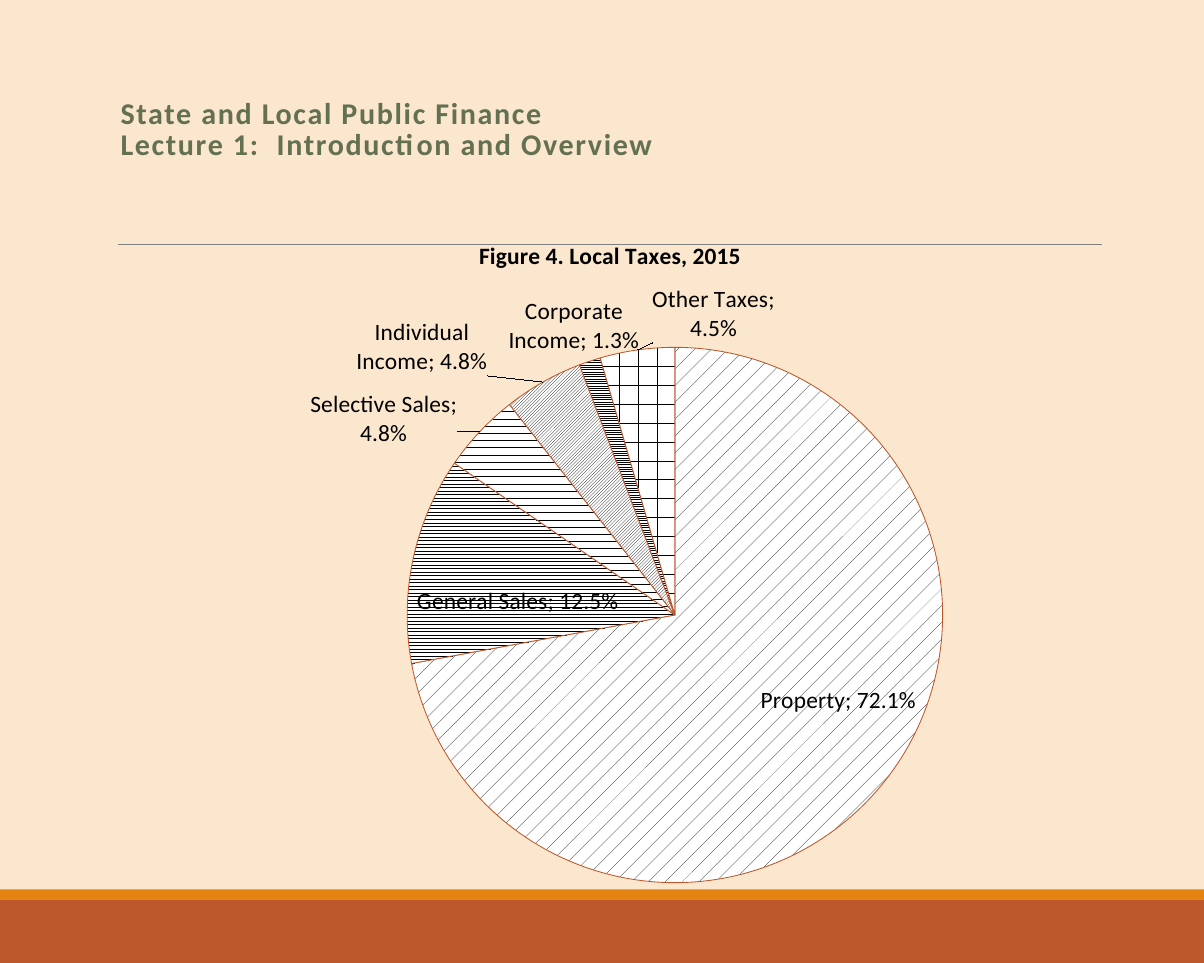
from pptx import Presentation
from pptx import util as u
from pptx.chart.data import CategoryChartData
from pptx.dml.color import RGBColor
from pptx.enum import chart as charts, dml, shapes, text
from pptx.oxml import parse_xml
from pptx.oxml.ns import nsdecls, qn

FONT = "Calibri"
CREAM = RGBColor(0xFB, 0xE6, 0xCE)
RUST = RGBColor(0xBD, 0x58, 0x2C)
ORANGE = RGBColor(0xE4, 0x83, 0x12)
GREEN = RGBColor(0x63, 0x70, 0x52)
GRAY = RGBColor(0x80, 0x80, 0x80)
BLACK = RGBColor(0, 0, 0)
WHITE = RGBColor(0xFF, 0xFF, 0xFF)

# Content
TITLE = "State and Local Public Finance\vLecture 1:  Introduction and Overview"
CHART_TITLE = "Figure 4. Local Taxes, 2015"
PATTERN = dml.MSO_PATTERN
# Tax, share, pattern, label position, label shift as a fraction of the chart
TAXES = [
    ("Property", 0.721, PATTERN.PERCENT_5, "ctr", (0.07, 0)),
    ("General Sales", 0.125, PATTERN.ZIG_ZAG, "ctr", (-0.03, 0.02)),
    ("Selective Sales", 0.048, PATTERN.DASHED_HORIZONTAL, "outEnd", (-0.02, 0.03)),
    ("Individual Income", 0.048, PATTERN.LIGHT_UPWARD_DIAGONAL, "outEnd", (-0.06, 0)),
    ("Corporate Income", 0.013, PATTERN.LIGHT_HORIZONTAL, "outEnd", (0.06, 0)),
    ("Other Taxes", 0.045, PATTERN.DOTTED_GRID, "outEnd", (0.16, 0)),
]
# Top, height and colour of the footer bands
BANDS = [(18.98, 1.34, RUST), (18.77, 0.21, ORANGE)]


def layout_xml(x, y, size=None, edge=False):
    modes = '<c:xMode val="edge"/><c:yMode val="edge"/>' if edge else ""
    extent = f'<c:w val="{size[0]}"/><c:h val="{size[1]}"/>' if size else ""
    target = '<c:layoutTarget val="inner"/>' if size else ""
    return (f'<c:layout {nsdecls("c")}><c:manualLayout>{target}{modes}'
            f'<c:x val="{x}"/><c:y val="{y}"/>{extent}</c:manualLayout></c:layout>')


def place(parent, index, xml):
    old = parent.find(qn("c:layout"))
    if old is not None:
        parent.remove(old)
    parent.insert(index, parse_xml(xml))


def labels_xml():
    number = '<c:numFmt formatCode="0.0%" sourceLinked="0"/>'
    style = ('<c:spPr><a:noFill/><a:ln><a:noFill/></a:ln></c:spPr>'
             '<c:txPr><a:bodyPr wrap="square"/><a:p><a:pPr><a:defRPr sz="1400">'
             f'<a:solidFill><a:srgbClr val="{BLACK}"/></a:solidFill>'
             f'<a:latin typeface="{FONT}"/></a:defRPr></a:pPr></a:p></c:txPr>')
    show = ('<c:showLegendKey val="0"/><c:showVal val="1"/><c:showCatName val="1"/>'
            '<c:showSerName val="0"/><c:showPercent val="0"/><c:showBubbleSize val="0"/>'
            '<c:separator>; </c:separator>')
    labels = "".join(
        f'<c:dLbl><c:idx val="{i}"/>{layout_xml(*shift)}{number}{style}'
        f'<c:dLblPos val="{position}"/>{show}</c:dLbl>'
        for i, (_, _, _, position, shift) in enumerate(TAXES))
    return (f'<c:dLbls {nsdecls("c", "a")}>{labels}{number}{style}{show}'
            '<c:showLeaderLines val="1"/></c:dLbls>')


deck = Presentation()
deck.slide_width, deck.slide_height = u.Cm(25.4), u.Cm(20.32)
page = deck.slides.add_slide(deck.slide_layouts[5])
page.background.fill.solid()
page.background.fill.fore_color.rgb = CREAM

# Footer bands
for top, height, color in BANDS:
    band = page.shapes.add_shape(shapes.MSO_SHAPE.RECTANGLE, 0, u.Cm(top),
                                 deck.slide_width, u.Cm(height))
    band.shadow.inherit = False
    band.fill.solid()
    band.fill.fore_color.rgb = color
    band.line.fill.background()

# Rule under the title
rule = page.shapes.add_connector(shapes.MSO_CONNECTOR.STRAIGHT,
                                 u.Cm(2.49), u.Cm(5.16), u.Cm(23.24), u.Cm(5.16))
rule.line.color.rgb = GRAY
rule.line.width = u.Pt(0.5)
rule._element.spPr.append(parse_xml(f'<a:effectLst {nsdecls("a")}/>'))

# Title
title = page.shapes.title
title.left, title.top, title.width, title.height = map(u.Cm, (2.29, 0.84, 20.96, 2.69))
frame = title.text_frame
frame.text = TITLE
frame.word_wrap = True
frame.vertical_anchor = text.MSO_ANCHOR.BOTTOM
para = frame.paragraphs[0]
para.alignment = text.PP_ALIGN.LEFT
para.line_spacing = 0.85
para.font.size, para.font.bold, para.font.name = u.Pt(18), True, FONT
para.font.color.rgb = GREEN
for span in para.runs:
    span._r.get_or_add_rPr().set("spc", "100")

# Pie chart
data = CategoryChartData(number_format="0.0%")
data.categories = [tax[0] for tax in TAXES]
data.add_series("Series 1", [tax[1] for tax in TAXES])
pie = page.shapes.add_chart(charts.XL_CHART_TYPE.PIE, u.Cm(3.61), u.Cm(4.37),
                            u.Cm(18.31), u.Cm(14.63), data).chart
pie.has_legend = False
pie.font.name, pie.font.size = FONT, u.Pt(10)
pie.font.color.rgb = BLACK
pie.plots[0].vary_by_categories = True

# Chart title
pie.has_title = True
heading = pie.chart_title.text_frame
heading.text = CHART_TITLE
font = heading.paragraphs[0].font
font.size, font.bold, font.name = u.Pt(14), True, FONT
font.color.rgb = BLACK
place(pie.chart_title._element, 1, layout_xml(0.35, 0.04, edge=True))
plot_area = pie._chartSpace.chart.plotArea
place(plot_area, 0, layout_xml(0.272, 0.202, size=(0.617, 0.773), edge=True))

# Slices and their labels
series = pie.plots[0].series[0]
for i, tax in enumerate(TAXES):
    slice_format = series.points[i].format
    slice_format.fill.patterned()
    slice_format.fill.pattern = tax[2]
    slice_format.fill.fore_color.rgb = BLACK
    slice_format.fill.back_color.rgb = WHITE
    slice_format.line.color.rgb = RUST
    slice_format.line.width = u.Pt(0.5)
series._element.find(qn("c:cat")).addprevious(parse_xml(labels_xml()))

deck.save("out.pptx")
